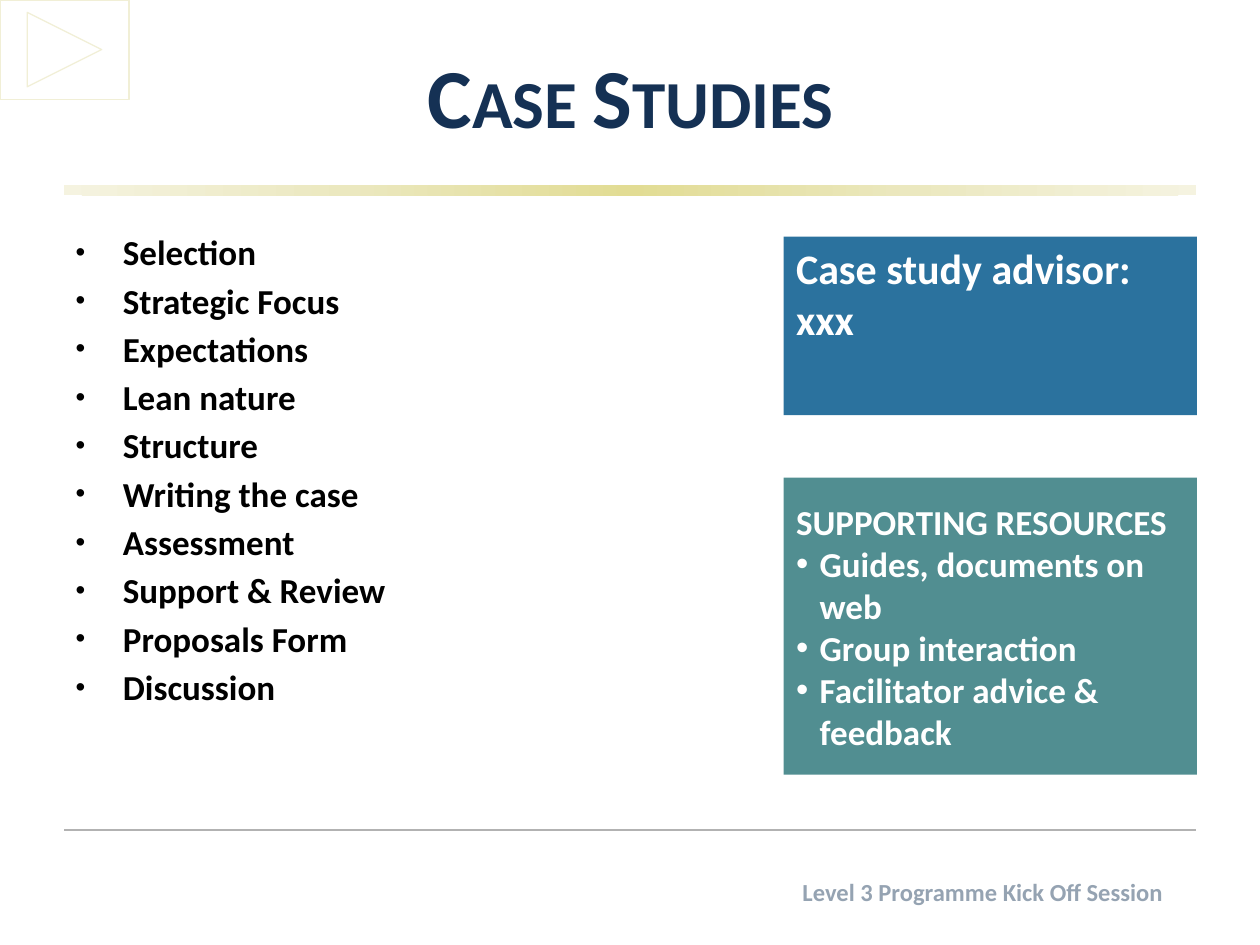
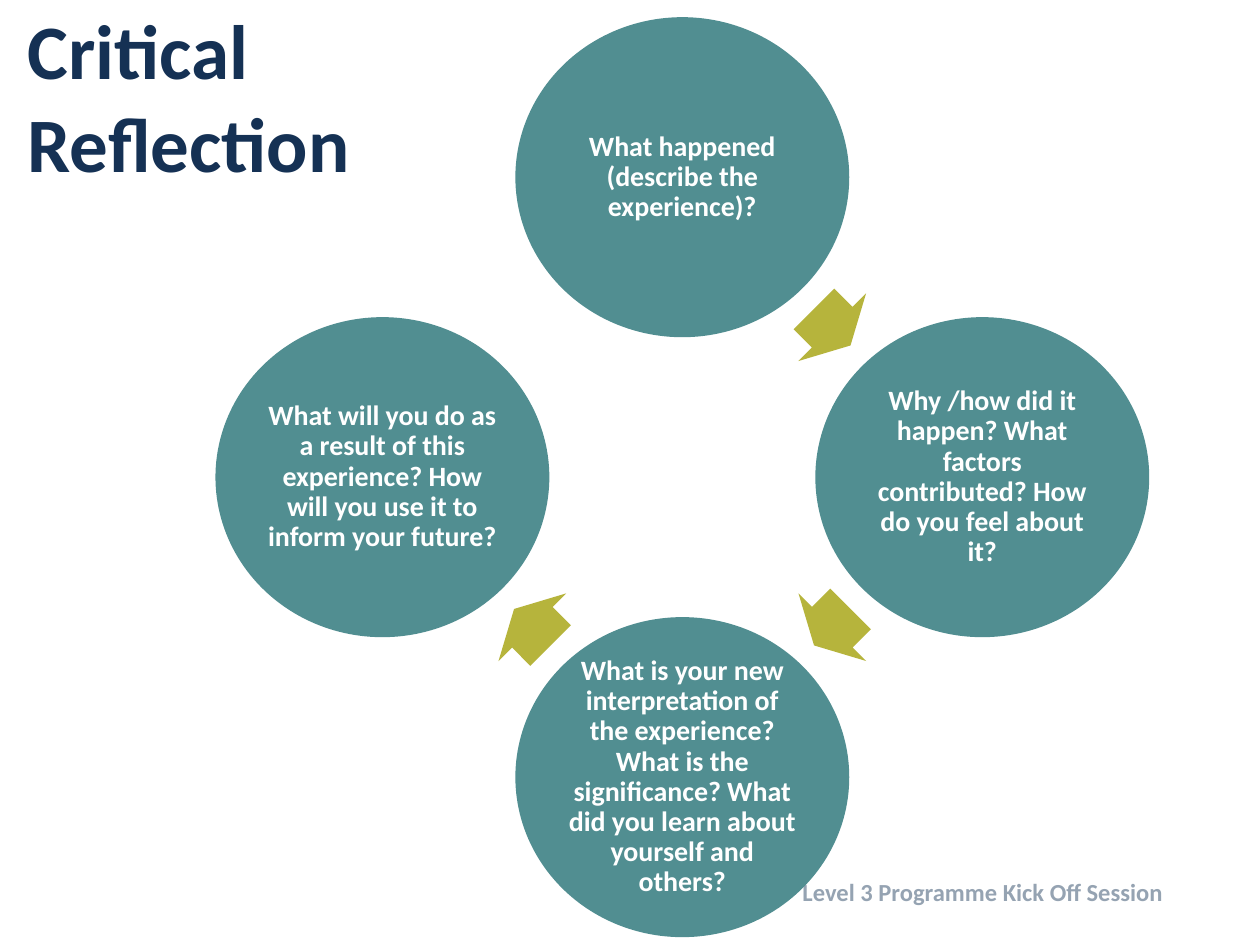
"""Build the case studies and critical reflection slides."""
import math
from dataclasses import dataclass

import lxml.etree
import pptx
import pptx.dml.color
import pptx.enum.shapes
import pptx.enum.text
import pptx.oxml
import pptx.oxml.ns
import pptx.util

Pt = pptx.util.Pt
SHAPE = pptx.enum.shapes.MSO_SHAPE
ALIGN = pptx.enum.text.PP_ALIGN
ANCHOR = pptx.enum.text.MSO_ANCHOR
qn = pptx.oxml.ns.qn


@dataclass(frozen=True)
class Theme:
    font: str = "Calibri"
    navy: str = "153154"
    black: str = "000000"
    white: str = "FFFFFF"
    blue: str = "2B729E"
    teal: str = "518E91"
    olive: str = "B6B43C"
    footer: str = "95A3B2"
    rule: str = "B2B2B2"
    button: str = "F1EFD6"
    band: tuple = ("E2DC94", "EBE8BF", "F5F3E0")
    title_size: float = 48
    side_title_size: float = 44
    lead_size: float = 24
    list_size: float = 20
    circle_size: float = 16
    footer_size: float = 14


def rgb(color):
    return pptx.dml.color.RGBColor.from_string(color)


class SlideBuilder:
    def __init__(self, presentation, theme):
        self.presentation = presentation
        self.theme = theme
        self.slide = None

    def new_slide(self, layout_index):
        layout = self.presentation.slide_layouts[layout_index]
        self.slide = self.presentation.slides.add_slide(layout)

    def place(self, shape, box):
        shape.left, shape.top, shape.width, shape.height = map(Pt, box)

    def run(self, paragraph, text, size, color):
        run = paragraph.add_run()
        run.text = text
        run.font.name = self.theme.font
        run.font.size = Pt(size)
        run.font.bold = True
        run.font.color.rgb = rgb(color)
        return run

    def bullet(self, paragraph, indent, percent=100):
        properties = paragraph._p.get_or_add_pPr()
        properties.set("marL", str(Pt(indent)))
        properties.set("indent", str(-Pt(indent)))
        for tag, name, value in (
            ("a:buSzPct", "val", str(percent * 1000)),
            ("a:buFont", "typeface", "Arial"),
            ("a:buChar", "char", "•"),
        ):
            lxml.etree.SubElement(properties, qn(tag)).set(name, value)

    def paragraphs(self, frame, count):
        return [frame.paragraphs[0]] + [frame.add_paragraph() for _ in range(count - 1)]

    def title(self, text, box, size, align, small_caps=False):
        shape = self.slide.shapes.title
        self.place(shape, box)
        frame = shape.text_frame
        frame.auto_size = pptx.enum.text.MSO_AUTO_SIZE.NONE
        frame.vertical_anchor = ANCHOR.MIDDLE
        paragraph = frame.paragraphs[0]
        paragraph.alignment = align
        run = self.run(paragraph, text, size, self.theme.navy)
        if small_caps:
            run._r.get_or_add_rPr().set("cap", "small")

    def body_list(self, items, box):
        shape = self.slide.placeholders[1]
        self.place(shape, box)
        frame = shape.text_frame
        frame.auto_size = pptx.enum.text.MSO_AUTO_SIZE.NONE
        for index, (paragraph, item) in enumerate(zip(self.paragraphs(frame, len(items)), items)):
            self.bullet(paragraph, 27, 79)
            paragraph.space_before = Pt(3.6 if index else 0)
            self.run(paragraph, item, self.theme.list_size, self.theme.black)

    def shape(self, kind, box, fill=None, line=None):
        shape = self.slide.shapes.add_shape(kind, *map(Pt, box))
        shape.shadow.inherit = False
        if fill:
            shape.fill.solid()
            shape.fill.fore_color.rgb = rgb(fill)
        else:
            shape.fill.background()
        if line:
            shape.line.color.rgb = rgb(line)
            shape.line.width = Pt(0.75)
        else:
            shape.line.fill.background()
        return shape

    def panel(self, box, fill, anchor):
        frame = self.shape(SHAPE.RECTANGLE, box, fill).text_frame
        frame.word_wrap = True
        frame.vertical_anchor = anchor
        return frame

    def advisor_panel(self, lines, box):
        frame = self.panel(box, self.theme.blue, ANCHOR.TOP)
        paragraph = frame.paragraphs[0]
        paragraph.alignment = ALIGN.LEFT
        for index, line in enumerate(lines):
            if index:
                paragraph.add_line_break()
            self.run(paragraph, line, self.theme.lead_size, self.theme.white)

    def resources_panel(self, heading, items, box):
        frame = self.panel(box, self.theme.teal, ANCHOR.MIDDLE)
        texts = [heading] + items
        for index, (paragraph, text) in enumerate(zip(self.paragraphs(frame, len(texts)), texts)):
            if index:
                self.bullet(paragraph, 13.5)
            paragraph.alignment = ALIGN.LEFT
            self.run(paragraph, text, self.theme.list_size, self.theme.white)

    def band(self, box):
        shape = self.shape(SHAPE.RECTANGLE, box)
        stops = "".join(
            f'<a:gs pos="{index * 50000}"><a:srgbClr val="{color}"/></a:gs>'
            for index, color in enumerate(self.theme.band)
        )
        gradient = pptx.oxml.parse_xml(
            f'<a:gradFill {pptx.oxml.ns.nsdecls("a")} rotWithShape="1"><a:gsLst>{stops}</a:gsLst>'
            '<a:path path="circle"><a:fillToRect l="50000" t="50000" r="50000" b="50000"/></a:path>'
            "</a:gradFill>"
        )
        properties = shape._element.spPr
        properties.replace(properties.find(qn("a:noFill")), gradient)

    def rule(self, left, right, top):
        connector = self.slide.shapes.add_connector(
            pptx.enum.shapes.MSO_CONNECTOR.STRAIGHT, Pt(left), Pt(top), Pt(right), Pt(top)
        )
        connector.line.color.rgb = rgb(self.theme.rule)
        connector.line.width = Pt(1.5)
        lxml.etree.SubElement(connector._element.spPr, qn("a:effectLst"))

    def footer(self, text):
        box = (246.2, 497.5, 425.5, 28.1)
        frame = self.slide.shapes.add_textbox(*map(Pt, box)).text_frame
        frame.word_wrap = True
        paragraph = frame.paragraphs[0]
        paragraph.alignment = ALIGN.RIGHT
        self.run(paragraph, text, self.theme.footer_size, self.theme.footer)

    def circle(self, text, center_x, center_y):
        width, height = 190.8, 182.9
        box = (center_x - width / 2, center_y - height / 2, width, height)
        frame = self.shape(SHAPE.OVAL, box, self.theme.teal).text_frame
        frame.word_wrap = True
        frame.vertical_anchor = ANCHOR.MIDDLE
        frame.margin_left = frame.margin_right = Pt(1.6)
        frame.margin_top = frame.margin_bottom = Pt(1.6)
        paragraph = frame.paragraphs[0]
        paragraph.alignment = ALIGN.CENTER
        paragraph.line_spacing = 0.9
        self.run(paragraph, text, self.theme.circle_size, self.theme.white)

    def arrow(self, center_x, center_y, rotation):
        width, height = 29.5, 54.7
        box = (center_x - width / 2, center_y - height / 2, width, height)
        arrow = self.shape(SHAPE.RIGHT_ARROW, box, self.theme.olive)
        arrow.adjustments[0] = 0.6
        arrow.adjustments[1] = 0.5
        arrow.rotation = rotation

    def cycle(self, questions, center_x, center_y, radius):
        def point(degrees, distance):
            angle = math.radians(degrees)
            return center_x + distance * math.cos(angle), center_y + distance * math.sin(angle)

        for index, question in enumerate(questions):
            degrees = 90 * index - 90
            self.circle(question, *point(degrees, radius))
            if index < len(questions) - 1:
                self.arrow(*point(degrees + 45, radius / math.sqrt(2)), degrees + 135)


def main():
    presentation = pptx.Presentation()
    presentation.slide_width, presentation.slide_height = Pt(720), Pt(540)
    theme = Theme()
    builder = SlideBuilder(presentation, theme)
    footer = "Level 3 Programme Kick Off Session"

    builder.new_slide(1)
    builder.band((36.7, 105.8, 646.6, 5.8))
    builder.rule(36.7, 683.3, 474.2)
    builder.shape(SHAPE.ACTION_BUTTON_FORWARD_OR_NEXT, (0, 0, 73.7, 56.7), line=theme.button)
    builder.title("Case Studies", (36.7, 9.4, 647.3, 90), theme.title_size, ALIGN.CENTER, True)
    topics = [
        "Selection", "Strategic Focus", "Expectations", "Lean nature", "Structure",
        "Writing the case", "Assessment", "Support & Review", "Proposals Form", "Discussion",
    ]
    builder.body_list(topics, (36, 128.2, 272.9, 345.6))
    builder.advisor_panel(["Case study advisor:", "xxx"], (447.8, 135.2, 236.2, 102))
    resources = ["Guides, documents on web", "Group interaction", "Facilitator advice & feedback"]
    builder.resources_panel("SUPPORTING RESOURCES", resources, (447.8, 272.9, 236.2, 169.7))
    builder.footer(footer)

    builder.new_slide(5)
    builder.title("Critical Reflection", (8.6, 9.4, 260.6, 90), theme.side_title_size, ALIGN.LEFT)
    builder.footer(footer)
    questions = [
        "What happened (describe the experience)?",
        "Why /how did it happen? What factors contributed? How do you feel about it?",
        "What is your new interpretation of the experience? What is the significance? "
        "What did you learn about yourself and others?",
        "What will you do as a result of this experience? How will you use it to inform your future?",
    ]
    builder.cycle(questions, 389.9, 272.7, 171.4)

    presentation.save("out.pptx")


if __name__ == "__main__":
    main()
